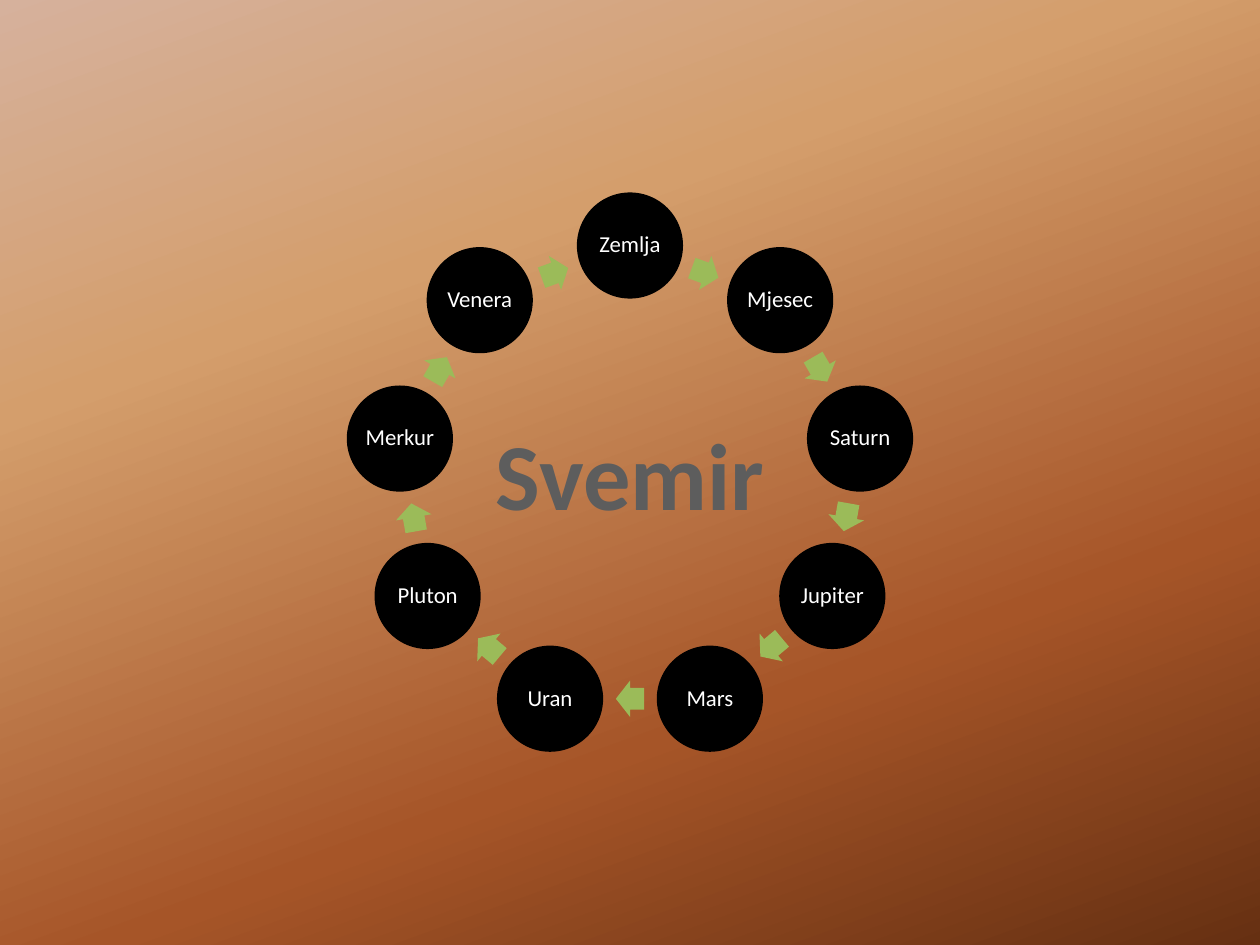
from math import cos, radians, sin

from lxml import etree
from pptx import Presentation
from pptx.dml.color import RGBColor
from pptx.enum.shapes import MSO_SHAPE as SHAPE
from pptx.enum.text import MSO_ANCHOR, PP_ALIGN
from pptx.oxml import parse_xml
from pptx.oxml.ns import nsdecls, qn
from pptx.util import Cm, Pt

TITLE = "Svemir"
BODIES = ["Zemlja", "Mjesec", "Saturn", "Jupiter", "Mars",
          "Uran", "Pluton", "Merkur", "Venera"]

THEME = {
    "font": "Calibri",
    "body_size": Pt(13),
    "title_size": Pt(54),
    "body": RGBColor(0x00, 0x00, 0x00),
    "body_text": RGBColor(0xFF, 0xFF, 0xFF),
    "arrow": RGBColor(0x9B, 0xBB, 0x59),
    "background": [(0, "D6B19C"), (30, "D49E6C"), (70, "A65528"), (100, "663012")],
    "title": [(0, "555555"), (49, "5D5D5D"), (50, "000000"), (100, "000000")],
    "title_outline": "FFFFFF",
}

# Ring geometry, in centimetres
CENTRE_X, CENTRE_Y = 12.7, 9.66
RADIUS = 4.71
DIAMETER = 2.14
ARROW_W, ARROW_H = 0.57, 0.73
STEP = 360 / len(BODIES)


def gradient(stops, angle):
    """Linear gradient fill; the angle runs clockwise in degrees."""
    gs = "".join(f'<a:gs pos="{pos * 1000}"><a:srgbClr val="{color}"/></a:gs>'
                 for pos, color in stops)
    return parse_xml(f'<a:gradFill {nsdecls("a")} rotWithShape="1"><a:gsLst>{gs}</a:gsLst>'
                     f'<a:lin ang="{angle * 60000}" scaled="0"/></a:gradFill>')


def set_background(slide):
    slide.background.fill.solid()
    bg_pr = slide.element.cSld.find(qn("p:bg")).find(qn("p:bgPr"))
    bg_pr.replace(bg_pr[0], gradient(THEME["background"], 70))


def ring_point(angle, radius):
    """Point at an angle measured clockwise from the top."""
    a = radians(angle)
    return CENTRE_X + radius * sin(a), CENTRE_Y - radius * cos(a)


def add_centred(slide, kind, centre, w, h, color):
    x, y = centre
    s = slide.shapes.add_shape(kind, Cm(x - w / 2), Cm(y - h / 2), Cm(w), Cm(h))
    s.shadow.inherit = False
    s.fill.solid()
    s.fill.fore_color.rgb = color
    s.line.fill.background()
    return s


def add_body(slide, name, angle):
    s = add_centred(slide, SHAPE.OVAL, ring_point(angle, RADIUS),
                    DIAMETER, DIAMETER, THEME["body"])
    tf = s.text_frame
    tf.margin_left = tf.margin_right = tf.margin_top = tf.margin_bottom = Cm(0.05)
    tf.vertical_anchor = MSO_ANCHOR.MIDDLE
    tf.text = name
    p = tf.paragraphs[0]
    p.alignment = PP_ALIGN.CENTER
    p.line_spacing = 0.9
    font = p.runs[0].font
    font.name, font.size = THEME["font"], THEME["body_size"]
    font.color.rgb = THEME["body_text"]


def add_arrow(slide, angle):
    """Arrow midway between two neighbours, pointing along the ring."""
    centre = ring_point(angle, RADIUS * cos(radians(STEP / 2)))
    s = add_centred(slide, SHAPE.RIGHT_ARROW, centre, ARROW_W, ARROW_H, THEME["arrow"])
    s.adjustments[0], s.adjustments[1] = 0.6, 0.5
    s.rotation = angle


def add_title(slide):
    w, h = 5.97, 2.57
    tb = slide.shapes.add_textbox(Cm(CENTRE_X - w / 2), Cm(8.26), Cm(w), Cm(h))
    tf = tb.text_frame
    tf.word_wrap = False
    tf.text = TITLE
    p = tf.paragraphs[0]
    p.alignment = PP_ALIGN.CENTER
    font = p.runs[0].font
    font.name, font.size, font.bold = THEME["font"], THEME["title_size"], True
    r_pr = p.runs[0]._r.get_or_add_rPr()
    r_pr.insert(0, gradient(THEME["title"], 90))
    outline = etree.Element(qn("a:ln"), w=str(Pt(1.4)))
    fill = etree.SubElement(outline, qn("a:solidFill"))
    etree.SubElement(fill, qn("a:srgbClr"), val=THEME["title_outline"])
    r_pr.insert(0, outline)


def main():
    prs = Presentation()
    prs.slide_width, prs.slide_height = Cm(25.4), Cm(19.05)
    slide = prs.slides.add_slide(prs.slide_layouts[6])
    set_background(slide)
    for i, name in enumerate(BODIES):
        add_body(slide, name, i * STEP)
        add_arrow(slide, (i + 0.5) * STEP)
    add_title(slide)
    prs.save("out.pptx")


if __name__ == "__main__":
    main()
